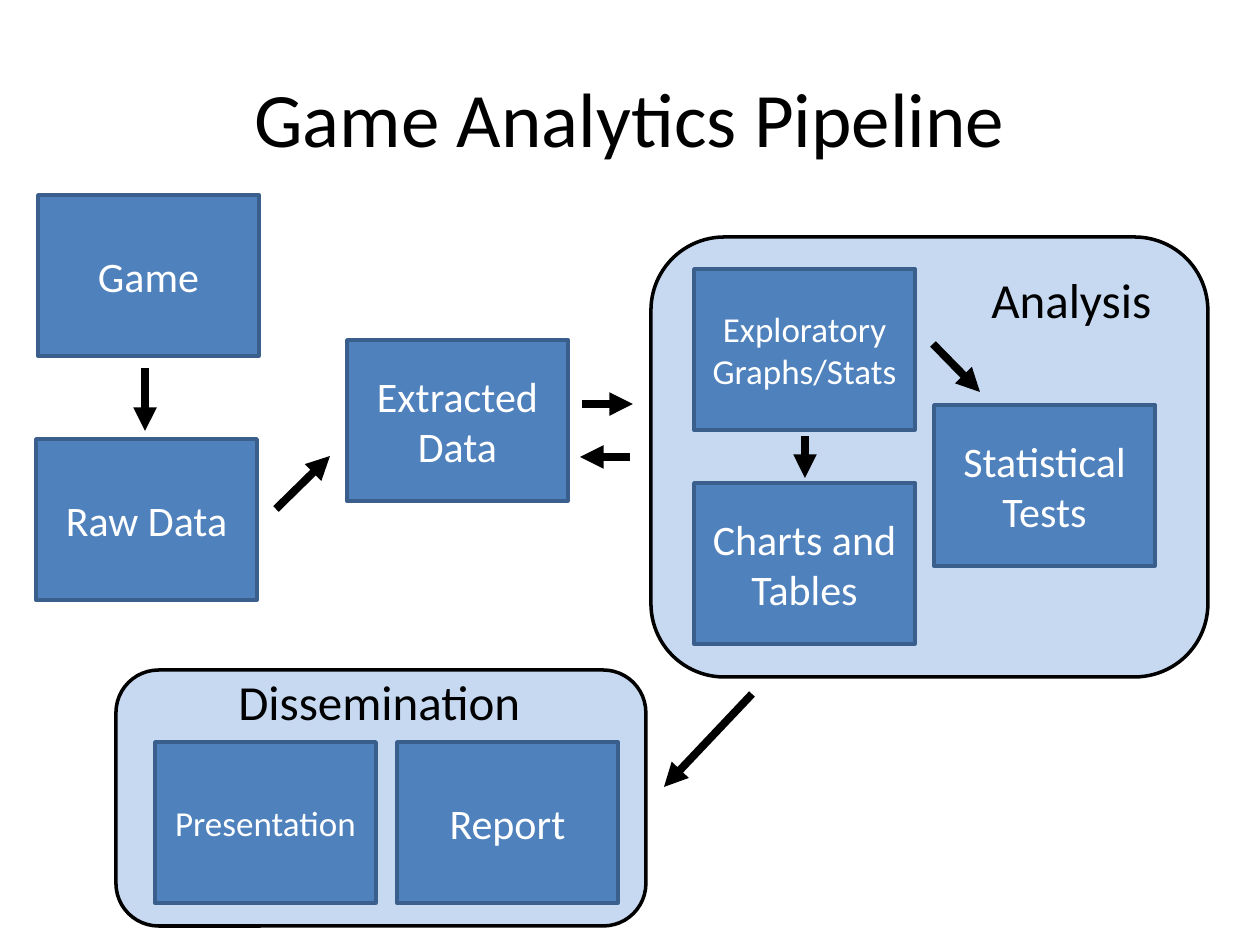
import pptx
import pptx.dml.color
import pptx.enum.shapes
import pptx.enum.text
import pptx.oxml.ns
import pptx.util
from lxml import etree

RGB = pptx.dml.color.RGBColor
SHAPE = pptx.enum.shapes.MSO_SHAPE
ALIGN = pptx.enum.text.PP_ALIGN
ANCHOR = pptx.enum.text.MSO_ANCHOR

BLACK = RGB(0x00, 0x00, 0x00)
WHITE = RGB(0xFF, 0xFF, 0xFF)
STEP_FILL = RGB(0x4F, 0x81, 0xBD)
STEP_EDGE = RGB(0x3A, 0x5F, 0x8C)
STAGE_FILL = RGB(0xC6, 0xD9, 0xF1)

FONT = "Calibri"
PX_PER_INCH = 126
STEP_WIDTH, STEP_HEIGHT = 221, 161

# Stage panels: left, top, width, height
STAGES = [
    (116, 670, 530, 256),
    (651, 237, 557, 440),
]

# Stage captions: text, left, top, width, height
CAPTIONS = [
    ("Analysis", 979, 263, 188, 72),
    ("Dissemination", 226, 665, 311, 72),
]

# Pipeline steps: text, left, top, text size
STEPS = [
    ("Game", 38, 195, 24),
    ("Raw Data", 36, 439, 24),
    ("Extracted Data", 347, 340, 24),
    ("Exploratory Graphs/Stats", 694, 269, 20),
    ("Charts and Tables", 694, 483, 24),
    ("Statistical Tests", 934, 405, 24),
    ("Presentation", 155, 742, 20),
    ("Report", 397, 742, 24),
]

# Flow arrows: start x, start y, end x, end y
FLOWS = [
    (145, 368, 145, 431),  # Game to Raw Data
    (276, 509, 330, 456),  # Raw Data to Extracted Data
    (582, 404, 633, 404),  # Extracted Data to Analysis
    (630, 457, 580, 457),  # Analysis back to Extracted Data
    (933, 344, 980, 392),  # Exploratory to Statistical Tests
    (805, 436, 805, 478),  # Exploratory to Charts and Tables
    (752, 694, 664, 787),  # Analysis to Dissemination
]


def px(*lengths):
    """Turn whole pixels into EMU."""
    return [pptx.util.Emu(round(n * 914400 / PX_PER_INCH)) for n in lengths]


def write(frame, text, *, size, color=BLACK, align=ALIGN.CENTER,
          anchor=ANCHOR.MIDDLE, wrap=True):
    frame.word_wrap = wrap
    frame.vertical_anchor = anchor
    paragraph = frame.paragraphs[0]
    paragraph.alignment = align
    run = paragraph.add_run()
    run.text = text
    run.font.name = FONT
    run.font.size = pptx.util.Pt(size)
    run.font.color.rgb = color


def add_panel(slide, kind, box, fill, edge):
    panel = slide.shapes.add_shape(kind, *px(*box))
    panel.shadow.inherit = False
    panel.fill.solid()
    panel.fill.fore_color.rgb = fill
    panel.line.color.rgb = edge
    panel.line.width = pptx.util.Pt(2)
    return panel


def add_step(slide, text, left, top, size):
    step = add_panel(slide, SHAPE.RECTANGLE,
                     (left, top, STEP_WIDTH, STEP_HEIGHT), STEP_FILL, STEP_EDGE)
    write(step.text_frame, text, size=size, color=WHITE)


def add_caption(slide, text, *box):
    caption = slide.shapes.add_textbox(*px(*box))
    write(caption.text_frame, text, size=28, align=ALIGN.LEFT,
          anchor=ANCHOR.TOP, wrap=False)
    caption.text_frame.auto_size = pptx.enum.text.MSO_AUTO_SIZE.SHAPE_TO_FIT_TEXT


def add_flow(slide, *ends):
    flow = slide.shapes.add_connector(
        pptx.enum.shapes.MSO_CONNECTOR.STRAIGHT, *px(*ends))
    flow.line.color.rgb = BLACK
    flow.line.width = pptx.util.Pt(4.5)
    qn = pptx.oxml.ns.qn
    etree.SubElement(flow.line._get_or_add_ln(), qn("a:tailEnd"), type="triangle")
    etree.SubElement(flow._element.spPr, qn("a:effectLst"))


def main():
    deck = pptx.Presentation()
    deck.slide_width, deck.slide_height = px(1260, 945)
    slide = deck.slides.add_slide(deck.slide_layouts[5])

    # Stage panels lie behind everything else
    for box in STAGES:
        add_panel(slide, SHAPE.ROUNDED_RECTANGLE, box, STAGE_FILL, BLACK)

    # Title
    title = slide.shapes.title
    title.left, title.top, title.width, title.height = px(63, 38, 1134, 157)
    write(title.text_frame, "Game Analytics Pipeline", size=44)

    # Steps, the arrows between them, and stage captions
    for step in STEPS:
        add_step(slide, *step)
    for flow in FLOWS:
        add_flow(slide, *flow)
    for caption in CAPTIONS:
        add_caption(slide, *caption)

    deck.save("out.pptx")


if __name__ == "__main__":
    main()
